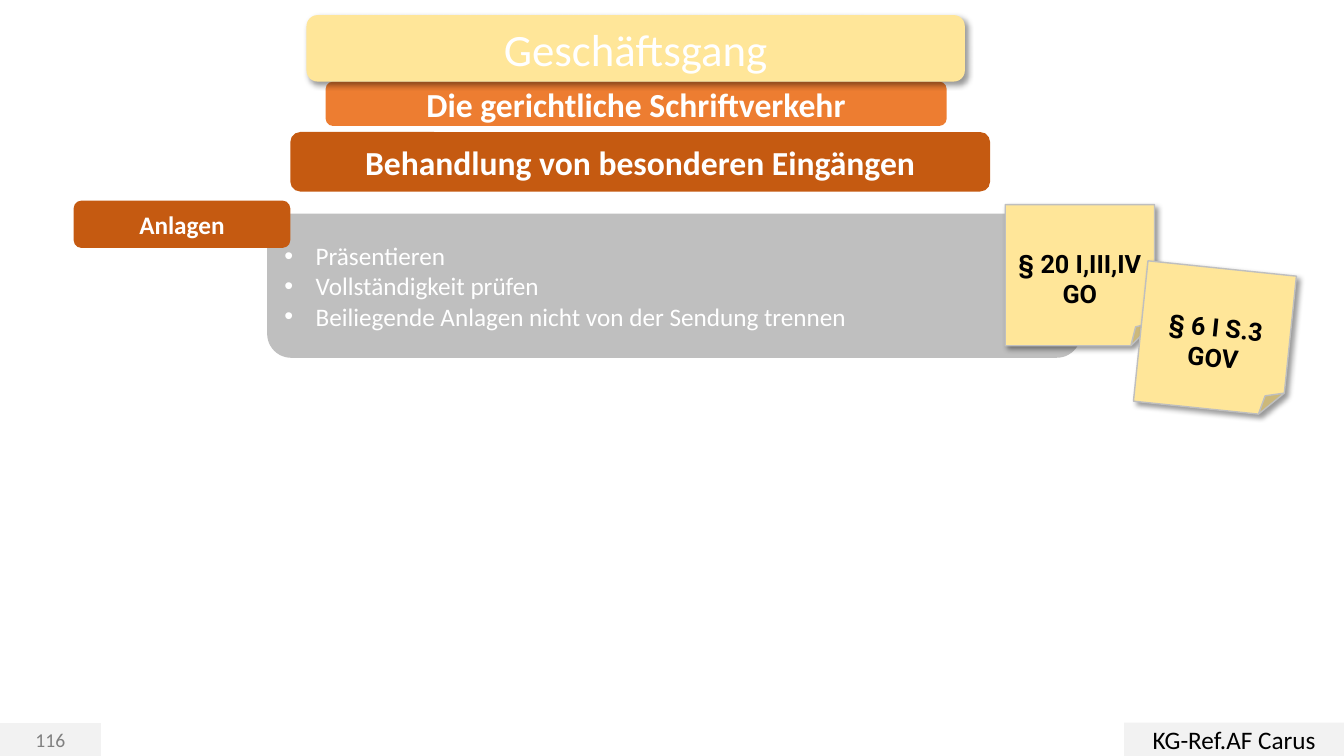
import pptx
import pptx.util
import pptx.dml.color
import pptx.enum.shapes
import pptx.enum.text
import pptx.oxml
import pptx.oxml.ns

Inches = pptx.util.Inches
Pt = pptx.util.Pt
RGBColor = pptx.dml.color.RGBColor
Shape = pptx.enum.shapes.MSO_SHAPE
Align = pptx.enum.text.PP_ALIGN

WHITE = RGBColor(0xFF, 0xFF, 0xFF)
BLACK = RGBColor(0, 0, 0)
PALE_GREY = RGBColor(0xF2, 0xF2, 0xF2)
GREY = RGBColor(0xBF, 0xBF, 0xBF)
DARK_GREY = RGBColor(0x80, 0x80, 0x80)
YELLOW = RGBColor(0xFF, 0xE6, 0x99)
ORANGE = RGBColor(0xED, 0x7D, 0x31)
RUST = RGBColor(0xC5, 0x5A, 0x11)

TITLE_AREA = (3.04, 0.15, 6.53, 0.66)
DUTIES = ["Präsentieren", "Vollständigkeit prüfen",
          "Beiliegende Anlagen nicht von der Sendung trennen"]


def add_panel(page, kind, area, fill, line=None):
    panel = page.shapes.add_shape(kind, *map(Inches, area))
    panel.shadow.inherit = False
    panel.fill.solid()
    panel.fill.fore_color.rgb = fill
    if line is None:
        panel.line.fill.background()
    else:
        panel.line.color.rgb = line
        panel.line.width = Pt(1)
    return panel


def set_text(box, lines, size, color, bold=False, font="Calibri",
             align=Align.CENTER):
    frame = box.text_frame
    frame.word_wrap = True
    frame.auto_size = pptx.enum.text.MSO_AUTO_SIZE.NONE
    frame.vertical_anchor = pptx.enum.text.MSO_ANCHOR.MIDDLE
    frame.text = "\n".join(lines)
    for para in frame.paragraphs:
        para.alignment = align
        para.space_before = Pt(0)
        para.font.name = font
        para.font.size = Pt(size)
        para.font.bold = bold
        para.font.color.rgb = color


def add_label(page, kind, area, fill, text, size, color, bold=False,
              line=None):
    set_text(add_panel(page, kind, area, fill, line), [text], size, color, bold)


def cast_shadow(panel):
    """Drop a soft black shadow towards the lower right."""
    effects = panel.element.spPr.find(pptx.oxml.ns.qn("a:effectLst"))
    effects.append(pptx.oxml.parse_xml(
        f'<a:outerShdw {pptx.oxml.ns.nsdecls("a")} blurRad="{Pt(4)}" '
        f'dist="{Pt(3)}" dir="2700000" algn="tl" rotWithShape="0">'
        '<a:srgbClr val="000000"><a:alpha val="40000"/></a:srgbClr>'
        '</a:outerShdw>'))


def add_sticky_note(page, left, top, text, rotation=0):
    note = add_panel(page, Shape.FOLDED_CORNER, (left, top, 1.48, 1.4),
                     YELLOW, GREY)
    note.rotation = rotation
    cast_shadow(note)
    set_text(note, [text], 18, BLACK, True, "Roboto")
    note.text_frame.margin_top = Inches(0.35)


def place_on(placeholder, panel, area):
    """Move a placeholder to the area, directly in front of the panel."""
    (placeholder.left, placeholder.top,
     placeholder.width, placeholder.height) = map(Inches, area)
    panel.element.addnext(placeholder.element)


def add_title(page):
    panel = add_panel(page, Shape.ROUNDED_RECTANGLE, TITLE_AREA, YELLOW)
    cast_shadow(panel)
    title = page.shapes.title
    place_on(title, panel, TITLE_AREA)
    set_text(title, ["Geschäftsgang"], 32, WHITE)


def add_duties(page):
    panel = add_panel(page, Shape.ROUNDED_RECTANGLE,
                      (2.65, 2.12, 8.07, 1.43), GREY)
    body = page.placeholders[1]
    place_on(body, panel, (2.72, 2.12, 7.93, 1.43))
    set_text(body, DUTIES, 18, WHITE, align=Align.LEFT)
    for para in body.text_frame.paragraphs:
        properties = para._p.get_or_add_pPr()
        properties.set("marL", str(Inches(0.31)))
        properties.set("indent", str(-Inches(0.31)))


def main():
    deck = pptx.Presentation()
    deck.slide_width = Inches(13.33)
    deck.slide_height = Inches(7.5)
    page = deck.slides.add_slide(deck.slide_layouts[1])

    add_duties(page)
    add_label(page, Shape.RECTANGLE, (0, 7.18, 1, 0.32), PALE_GREY,
              "116", 14, DARK_GREY, line=PALE_GREY)
    add_label(page, Shape.RECTANGLE, (11.15, 7.17, 2.18, 0.33), PALE_GREY,
              "KG-Ref.AF Carus", 18, BLACK)
    add_label(page, Shape.ROUNDED_RECTANGLE, (3.23, 0.81, 6.16, 0.44), ORANGE,
              "Die gerichtliche Schriftverkehr", 24, WHITE, True)
    add_title(page)
    add_label(page, Shape.ROUNDED_RECTANGLE, (0.73, 1.99, 2.15, 0.47), RUST,
              "Anlagen", 18, WHITE, True)
    add_label(page, Shape.ROUNDED_RECTANGLE, (2.88, 1.31, 6.94, 0.59), RUST,
              "Behandlung von besonderen Eingängen", 24, WHITE, True)
    add_sticky_note(page, 9.97, 2.03, "§ 20 I,III,IV GO")
    add_sticky_note(page, 11.31, 2.66, "§ 6 I S.3 GOV", 5.9)
    deck.save("out.pptx")


if __name__ == "__main__":
    main()
